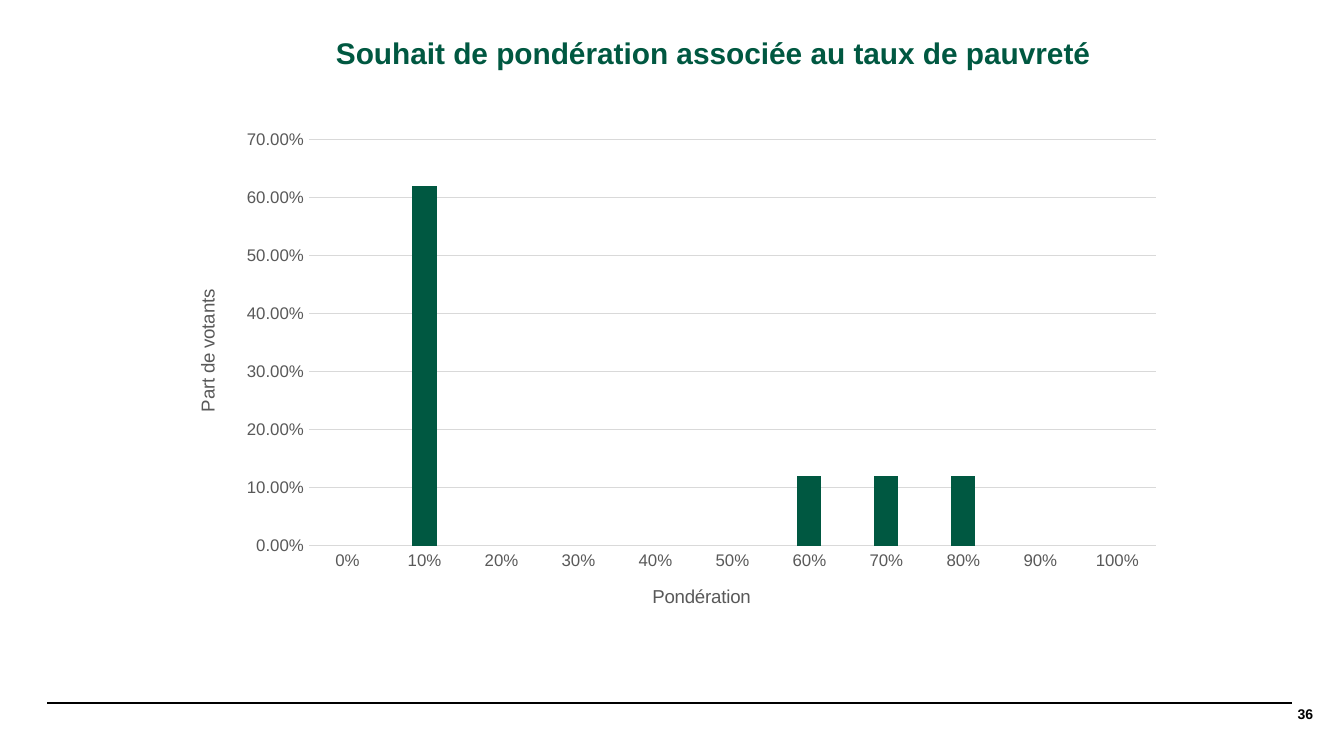
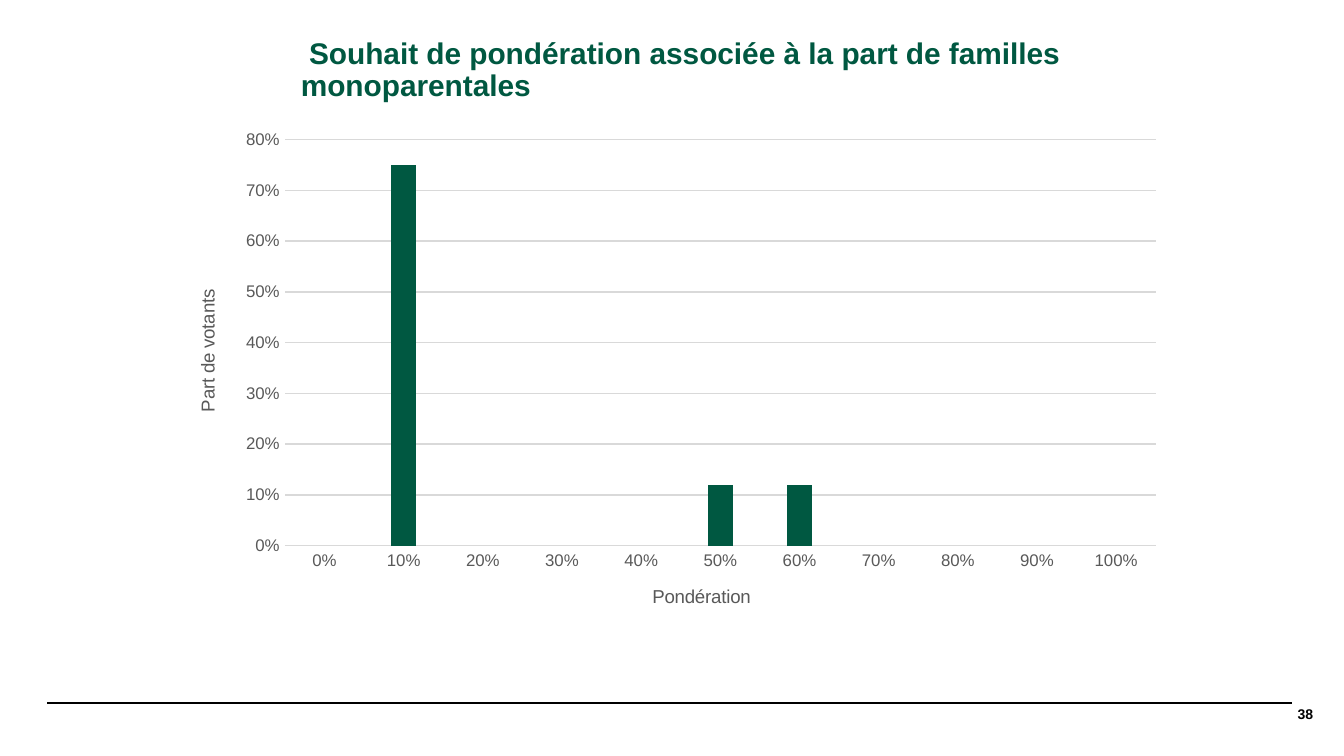
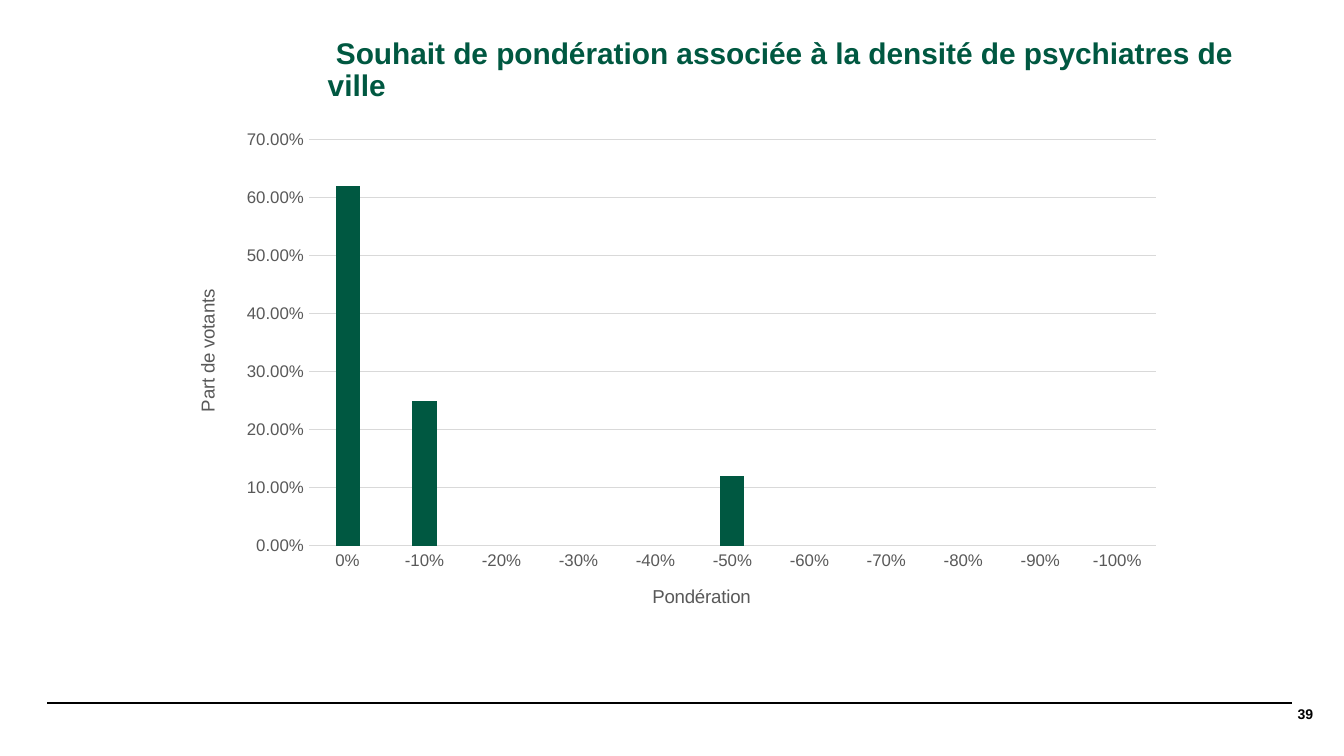
from lxml import etree
from pptx import Presentation
from pptx.chart.data import CategoryChartData
from pptx.dml.color import RGBColor
from pptx.enum.chart import XL_CHART_TYPE, XL_TICK_MARK
from pptx.enum.shapes import MSO_CONNECTOR
from pptx.enum.text import MSO_ANCHOR, MSO_AUTO_SIZE, PP_ALIGN
from pptx.oxml.ns import qn
from pptx.util import Inches, Pt

COLUMN = XL_CHART_TYPE.COLUMN_CLUSTERED
NO_TICK = XL_TICK_MARK.NONE
STRAIGHT = MSO_CONNECTOR.STRAIGHT
MIDDLE = MSO_ANCHOR.MIDDLE
GROW = MSO_AUTO_SIZE.SHAPE_TO_FIT_TEXT
RIGHT = PP_ALIGN.RIGHT

FONT = "Arial"
COLORS = {"green": "005841", "black": "000000", "label": "595959", "grid": "D9D9D9"}
CHART_BOX = (1.25, 0.89, 7.5, 3.84)
PLOT_TOP, PLOT_RIGHT, PLOT_BOTTOM = 1.04, 8.6, 4.06

SLIDES = [
    {
        "number": 36,
        "title": " Souhait de pondération associée au taux de pauvreté",
        "title_box": (2.32, 0.24, 7.41, 0.34),
        "sign": 1,
        "votes": {1: 0.62, 6: 0.12, 7: 0.12, 8: 0.12},
        "format": "0.00%",
        "maximum": 0.7,
        "plot_left": 2.3,
    },
    {
        "number": 38,
        "title": " Souhait de pondération associée à la part de familles monoparentales",
        "title_box": (2.12, 0.24, 7.62, 0.59),
        "sign": 1,
        "votes": {1: 0.75, 5: 0.12, 6: 0.12},
        "format": "0%",
        "maximum": 0.8,
        "plot_left": 2.12,
    },
    {
        "number": 39,
        "title": " Souhait de pondération associée à la densité de psychiatres de ville",
        "title_box": (2.32, 0.24, 7.41, 0.59),
        "sign": -1,
        "votes": {0: 0.62, 1: 0.25, 5: 0.12},
        "format": "0.00%",
        "maximum": 0.7,
        "plot_left": 2.3,
    },
]


def color(name):
    return RGBColor.from_string(COLORS[name])


def set_font(font, size, name, bold=False):
    font.name = FONT
    font.size = Pt(size)
    font.bold = bold
    font.color.rgb = color(name)


def add_text(slide, box, text, size, name):
    tf = slide.shapes.add_textbox(*map(Inches, box)).text_frame
    tf.word_wrap = True
    p = tf.paragraphs[0]
    p.text = text
    set_font(p.font, size, name, bold=True)
    return tf


def add_title(slide, box, text):
    tf = add_text(slide, box, text, 16, "green")
    tf.auto_size = GROW
    p = tf.paragraphs[0]
    p.line_spacing = 0.9
    p._p.get_or_add_pPr().set("marL", str(Inches(0.02)))


def add_footer(slide, box, number):
    left, top, width, height = box
    for x in (left, left + 0.04):
        s = slide.shapes.add_connector(
            STRAIGHT, Inches(x), Inches(top + 0.13), Inches(x + 9.22), Inches(top + 0.13)
        )
        s.line.color.rgb = color("black")
        s.line.width = Pt(0.8)
        etree.SubElement(s._element.spPr, qn("a:effectLst"))
    number_box = (left + width - 0.6, top, 0.6, height)
    tf = add_text(slide, number_box, str(number), 7.5, "black")
    tf.margin_top = tf.margin_bottom = Inches(0.1)
    tf.vertical_anchor = MIDDLE
    tf.paragraphs[0].alignment = RIGHT


def set_layout(element, index, box, position, size=None):
    for old in element.findall(qn("c:layout")):
        element.remove(old)
    layout = etree.Element(qn("c:layout"))
    manual = etree.SubElement(layout, qn("c:manualLayout"))
    left, top, width, height = box
    values = {
        "xMode": "edge",
        "yMode": "edge",
        "x": (position[0] - left) / width,
        "y": (position[1] - top) / height,
    }
    if size:
        values = {"layoutTarget": "inner", **values, "w": size[0] / width, "h": size[1] / height}
    for tag, value in values.items():
        text = value if isinstance(value, str) else f"{value:.4f}"
        etree.SubElement(manual, qn(f"c:{tag}")).set("val", text)
    element.insert(index, layout)


def style_axis(axis, box, title, position, number_format):
    axis.major_tick_mark = axis.minor_tick_mark = NO_TICK
    set_font(axis.tick_labels.font, 9, "label")
    axis.tick_labels.number_format = number_format
    axis.tick_labels.number_format_is_linked = False
    tf = axis.axis_title.text_frame
    tf.text = title
    set_font(tf.paragraphs[0].font, 10, "label")
    set_layout(axis.axis_title._element, 1, box, position)
    return tf


def set_line(line):
    line.color.rgb = color("grid")
    line.width = Pt(0.75)


def add_vote_chart(slide, box, votes):
    data = CategoryChartData(number_format=votes["format"])
    data.categories = [votes["sign"] * i / 10 for i in range(11)]
    data.categories.number_format = "0%"
    data.add_series("Series 1", [votes["votes"].get(i) for i in range(11)])
    chart = slide.shapes.add_chart(COLUMN, *map(Inches, box), data).chart
    chart.has_title = chart.has_legend = False
    set_font(chart.font, 10, "black")

    plot = chart.plots[0]
    plot.vary_by_categories = False
    plot.gap_width = 219
    plot.overlap = -27
    fill = plot.series[0].format.fill
    fill.solid()
    fill.fore_color.rgb = color("green")

    left, top = box[:2]
    weights, shares = chart.category_axis, chart.value_axis
    style_axis(weights, box, "Pondération", (left + 3.58, top + 3.43), "0%")
    set_line(weights.format.line)
    tf = style_axis(shares, box, "Part de votants", (left + 0.18, top + 1.24), votes["format"])
    tf._txBody.bodyPr.set("rot", "-5400000")
    tf._txBody.bodyPr.set("vert", "horz")
    shares.format.line.fill.background()
    shares.has_major_gridlines = True
    set_line(shares.major_gridlines.format.line)
    shares.minimum_scale = 0
    shares.maximum_scale = votes["maximum"]
    shares.major_unit = 0.1

    plot_area = chart._chartSpace.chart.plotArea
    size = (PLOT_RIGHT - votes["plot_left"], PLOT_BOTTOM - PLOT_TOP)
    set_layout(plot_area, 0, box, (votes["plot_left"], PLOT_TOP), size)


def main():
    prs = Presentation()
    prs.slide_width = Inches(10)
    prs.slide_height = prs.slide_width * 9 // 16
    for votes in SLIDES:
        slide = prs.slides.add_slide(prs.slide_layouts[6])
        add_footer(slide, (0.35, 5.1, 9.52, 0.43), votes["number"])
        add_title(slide, votes["title_box"], votes["title"])
        add_vote_chart(slide, CHART_BOX, votes)
    prs.save("out.pptx")


if __name__ == "__main__":
    main()
